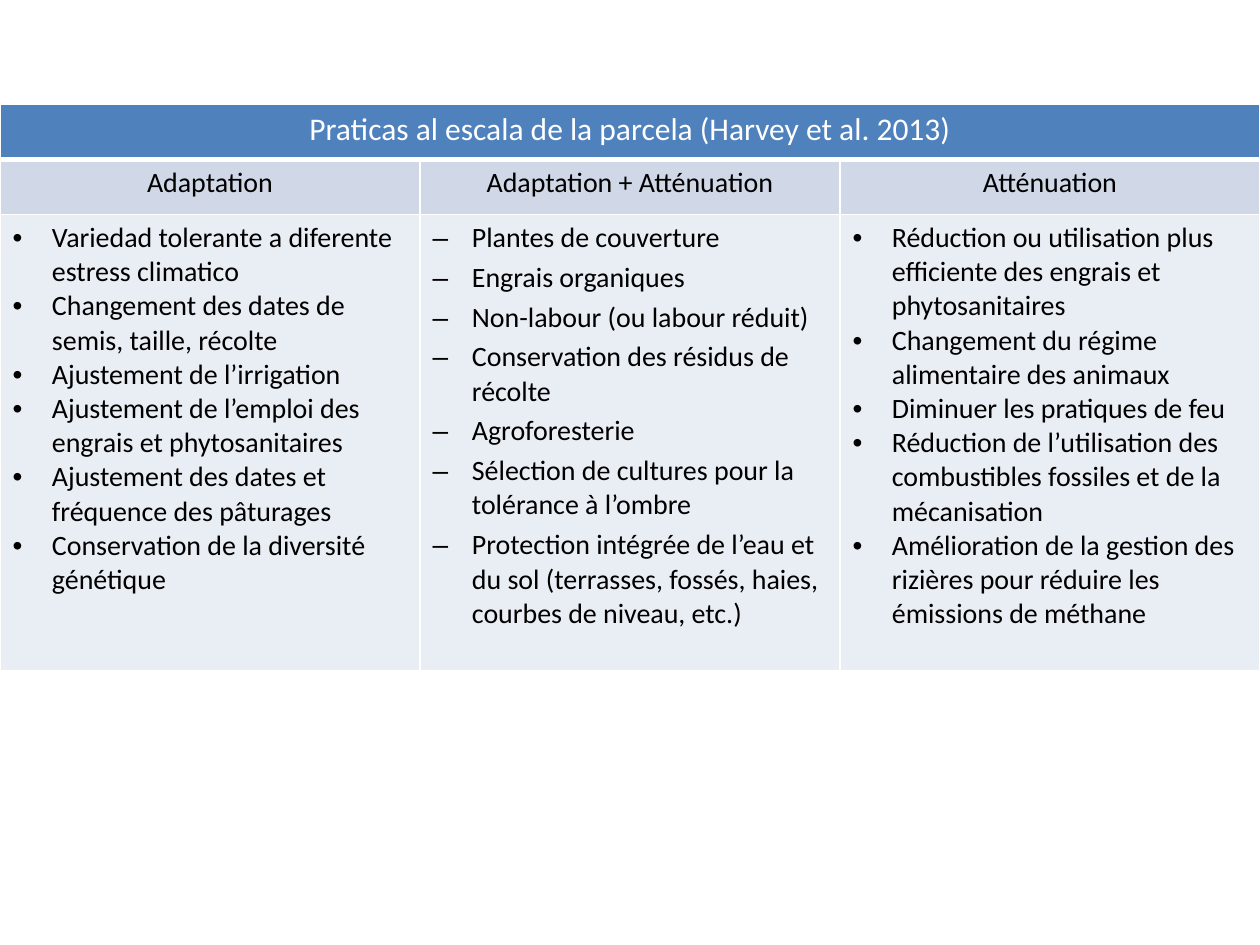
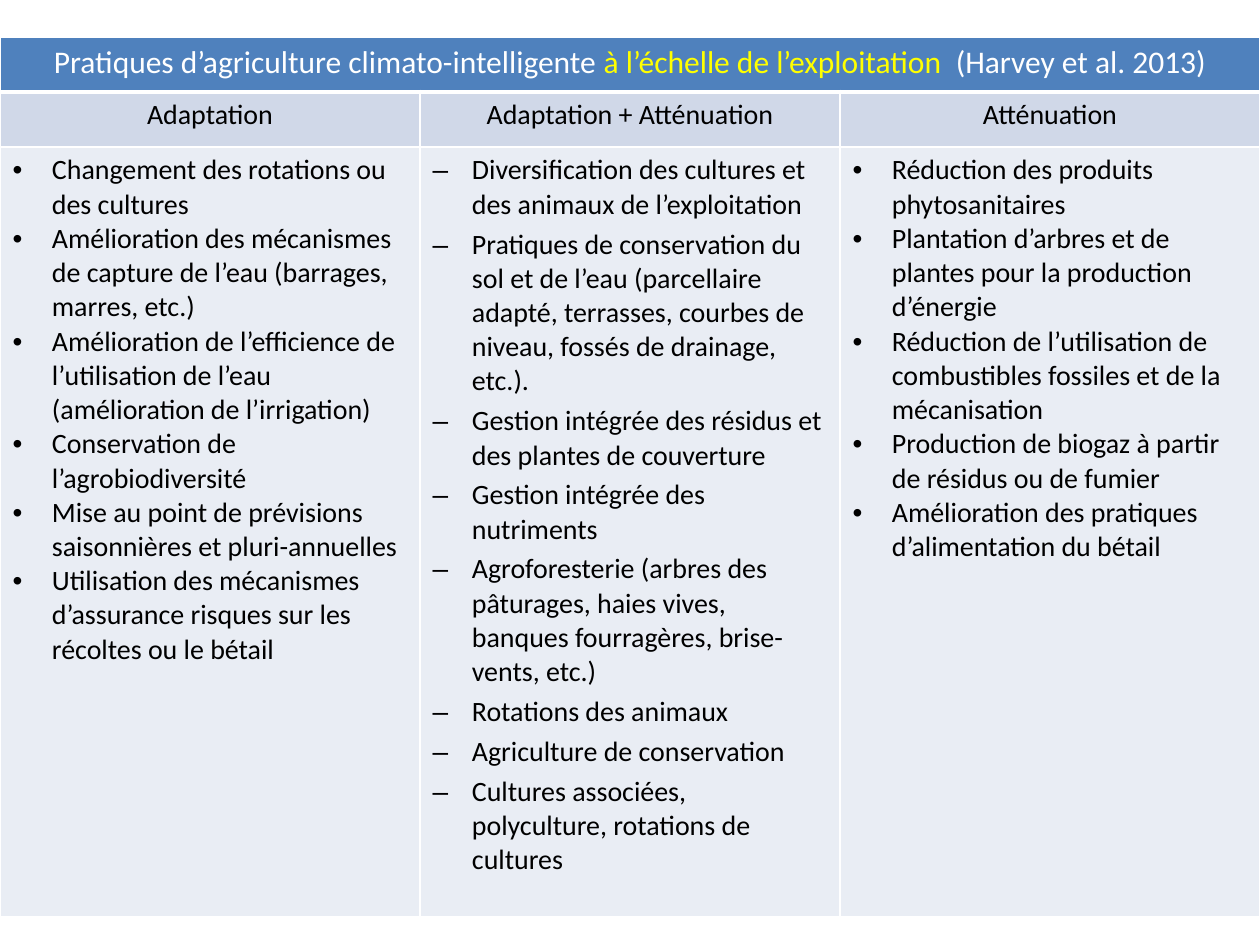
"""Build two slides of climate-smart farming practices, each a full-width table."""
from lxml.etree import SubElement
from pptx import Presentation
from pptx.dml.color import RGBColor
from pptx.enum.text import PP_ALIGN
from pptx.oxml.ns import qn
from pptx.util import Pt

COLORS = {
    "header": "4F81BD",
    "subhead": "D0D8E8",
    "body": "E9EDF4",
    "white": "FFFFFF",
    "black": "000000",
    "accent": "FFFF00",
}
FONT = "Calibri"
SLIDE_W, SLIDE_H = 720, 540
HEAD_H = 31.5
INDENT = 22.5
HEADINGS = ["Adaptation", "Adaptation + Atténuation", "Atténuation"]
BULLETS = ["•", "–", "•"]
GAPS = [0, 3.2, 0]

SLIDES = [
    {
        "top": 59.5,
        "body_h": 261,
        "title": [("Praticas al escala de la parcela (Harvey et al. 2013)", "white")],
        "columns": [
            [
                "Variedad tolerante a diferente estress climatico",
                "Changement des dates de semis, taille, récolte",
                "Ajustement de l’irrigation",
                "Ajustement de l’emploi des engrais et phytosanitaires",
                "Ajustement des dates et fréquence des pâturages",
                "Conservation de la diversité génétique",
            ],
            [
                "Plantes de couverture",
                "Engrais organiques",
                "Non-labour (ou labour réduit)",
                "Conservation des résidus de récolte",
                "Agroforesterie",
                "Sélection de cultures pour la tolérance à l’ombre",
                "Protection intégrée de l’eau et du sol (terrasses, fossés, haies, "
                "courbes de niveau, etc.)",
            ],
            [
                "Réduction ou utilisation plus efficiente des engrais et phytosanitaires",
                "Changement du régime alimentaire des animaux",
                "Diminuer les pratiques de feu",
                "Réduction de l’utilisation des combustibles fossiles et de la mécanisation",
                "Amélioration de la gestion des rizières pour réduire les émissions de méthane",
            ],
        ],
    },
    {
        "top": 21,
        "body_h": 440,
        "title": [
            ("Pratiques d’agriculture climato-intelligente ", "white"),
            ("à l’échelle de l’exploitation  ", "accent"),
            ("(Harvey et al. 2013)", "white"),
        ],
        "columns": [
            [
                "Changement des rotations ou des cultures",
                "Amélioration des mécanismes de capture de l’eau (barrages, marres, etc.)",
                "Amélioration de l’efficience de l’utilisation de l’eau  "
                "(amélioration de l’irrigation)",
                "Conservation de l’agrobiodiversité",
                "Mise au point de prévisions saisonnières et pluri-annuelles",
                "Utilisation des mécanismes d’assurance risques sur les récoltes ou le bétail",
            ],
            [
                "Diversification des cultures et des animaux de l’exploitation",
                "Pratiques de conservation du sol et de l’eau (parcellaire adapté, "
                "terrasses, courbes de niveau, fossés de drainage, etc.).",
                "Gestion intégrée des résidus et des plantes de couverture",
                "Gestion intégrée des nutriments",
                "Agroforesterie (arbres des pâturages, haies vives, "
                "banques fourragères, brise-vents, etc.)",
                "Rotations des animaux",
                "Agriculture de conservation",
                "Cultures associées, polyculture, rotations de cultures",
            ],
            [
                "Réduction des produits phytosanitaires",
                "Plantation d’arbres et de plantes pour la production d’énergie",
                "Réduction de l’utilisation de combustibles fossiles et de la mécanisation",
                "Production de biogaz à partir de résidus ou de fumier",
                "Amélioration des pratiques d’alimentation du bétail",
            ],
        ],
    },
]


def style_cell(cell, fill, bottom=1):
    tcPr = cell._tc.get_or_add_tcPr()
    for side, width in {"lnL": 1, "lnR": 1, "lnT": 1, "lnB": bottom}.items():
        ln = SubElement(tcPr, qn(f"a:{side}"), w=str(Pt(width)))
        solid = SubElement(ln, qn("a:solidFill"))
        SubElement(solid, qn("a:srgbClr"), val=COLORS["white"])
    cell.fill.solid()
    cell.fill.fore_color.rgb = RGBColor.from_string(COLORS[fill])


def add_text(p, text, size=16, color="black"):
    r = p.add_run()
    r.text = text
    for name, value in {"name": FONT, "size": Pt(size), "bold": False}.items():
        setattr(r.font, name, value)
    r.font.color.rgb = RGBColor.from_string(COLORS[color])


prs = Presentation()
prs.slide_width, prs.slide_height = Pt(SLIDE_W), Pt(SLIDE_H)

for data in SLIDES:
    s = prs.slides.add_slide(prs.slide_layouts[6])
    heights = [HEAD_H, HEAD_H, data["body_h"]]
    frame = s.shapes.add_table(3, 3, 0, Pt(data["top"]), Pt(SLIDE_W), Pt(sum(heights)))
    table = frame.table
    table.first_row = table.horz_banding = False
    for row, height in zip(table.rows, heights):
        row.height = Pt(height)

    title = table.cell(0, 0)
    title.merge(table.cell(0, 2))
    p = title.text_frame.paragraphs[0]
    p.alignment = PP_ALIGN.CENTER
    for text, color in data["title"]:
        add_text(p, text, 18, color)

    for col, items in enumerate(data["columns"]):
        style_cell(table.cell(0, col), "header", bottom=3)

        subhead = table.cell(1, col)
        style_cell(subhead, "subhead")
        p = subhead.text_frame.paragraphs[0]
        p.alignment = PP_ALIGN.CENTER
        add_text(p, HEADINGS[col])

        body = table.cell(2, col)
        style_cell(body, "body")
        tf = body.text_frame
        for i, item in enumerate(items):
            p = tf.add_paragraph() if i else tf.paragraphs[0]
            p.space_before = Pt(GAPS[col])
            pPr = p._p.get_or_add_pPr()
            pPr.set("marL", str(Pt(INDENT)))
            pPr.set("indent", str(-Pt(INDENT)))
            SubElement(pPr, qn("a:buFont"), typeface="Arial")
            SubElement(pPr, qn("a:buChar"), char=BULLETS[col])
            add_text(p, item)

prs.save("out.pptx")
